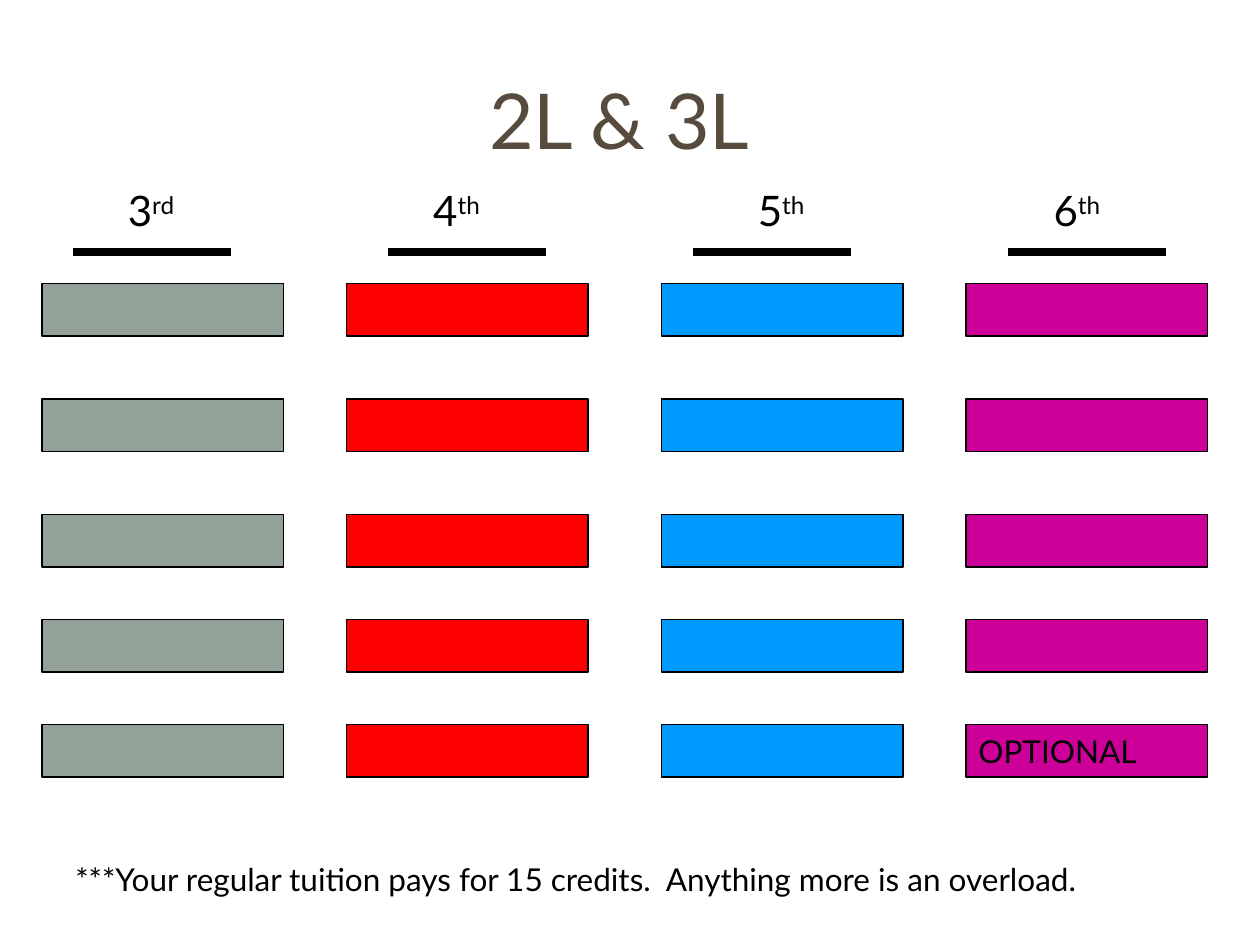
from lxml import etree
from pptx import Presentation
from pptx.dml.color import RGBColor
from pptx.enum.shapes import MSO_CONNECTOR, MSO_SHAPE
from pptx.enum.text import MSO_ANCHOR, PP_ALIGN
from pptx.oxml.ns import qn
from pptx.util import Pt

STRAIGHT = MSO_CONNECTOR.STRAIGHT
RECTANGLE = MSO_SHAPE.RECTANGLE
MIDDLE = MSO_ANCHOR.MIDDLE
CENTER, LEFT = PP_ALIGN.CENTER, PP_ALIGN.LEFT
BLACK = "000000"

# number, suffix, tab stop, underline left, box left, box colour
SEMESTERS = [
    ("3", "rd", 0, 42, 24, "93A299"),
    ("4", "th", 174.5, 222, 198, "FF0000"),
    ("5", "th", 360, 396, 378, "0099FF"),
    ("6", "th", 529, 576, 552, "CC0099"),
]
ROW_TOPS = [162, 228, 294, 354, 414]


def color(hex_string):
    return RGBColor.from_string(hex_string)


def add_run(paragraph, text, size, hex_string=BLACK):
    run = paragraph.add_run()
    run.text = text
    run.font.name = "Lato"
    run.font.size = Pt(size)
    run.font.color.rgb = color(hex_string)
    return run


presentation = Presentation()
presentation.slide_width = Pt(720)
presentation.slide_height = Pt(540)
slide = presentation.slides.add_slide(presentation.slide_layouts[5])

title = slide.shapes.title
title.left, title.top, title.width, title.height = Pt(48), Pt(10), Pt(612), Pt(116)
title.text_frame.vertical_anchor = MIDDLE
paragraph = title.text_frame.paragraphs[0]
paragraph.alignment = CENTER
add_run(paragraph, "2L & 3L", 44, "564B3C")

# Semester headings share one line, spaced by tab stops
headings = slide.shapes.add_textbox(Pt(66), Pt(102), Pt(607), Pt(36.5))
headings.text_frame.word_wrap = True
paragraph = headings.text_frame.paragraphs[0]
tab_list = etree.SubElement(paragraph._p.get_or_add_pPr(), qn("a:tabLst"))
for number, suffix, tab_stop, *_ in SEMESTERS:
    if tab_stop:
        etree.SubElement(tab_list, qn("a:tab"), pos=str(Pt(tab_stop)), algn="l")
        number = "\t" + number
    add_run(paragraph, number, 24)
    superscript = add_run(paragraph, suffix, 24)
    superscript._r.get_or_add_rPr().set("baseline", "30000")

for _, _, _, line_left, box_left, fill in SEMESTERS:
    underline = slide.shapes.add_connector(
        STRAIGHT, Pt(line_left), Pt(144), Pt(line_left + 90), Pt(144))
    underline.line.color.rgb = color(BLACK)
    underline.line.width = Pt(4.5)
    etree.SubElement(underline._element.spPr, qn("a:effectLst"))

    for top in ROW_TOPS:
        course = slide.shapes.add_shape(RECTANGLE, Pt(box_left), Pt(top), Pt(138), Pt(30))
        course.shadow.inherit = False
        course.fill.solid()
        course.fill.fore_color.rgb = color(fill)
        course.line.color.rgb = color(BLACK)
        course.line.width = Pt(0.75)

# The last course of the last semester
course.text_frame.word_wrap = False
course.text_frame.vertical_anchor = MIDDLE
paragraph = course.text_frame.paragraphs[0]
paragraph.alignment = LEFT
add_run(paragraph, "OPTIONAL", 18)

footnote = slide.shapes.add_textbox(Pt(36), Pt(488), Pt(654), Pt(29))
footnote.text_frame.word_wrap = True
add_run(footnote.text_frame.paragraphs[0],
        "***Your regular tuition pays for 15 credits.  Anything more is an overload.", 18)

presentation.save("out.pptx")
